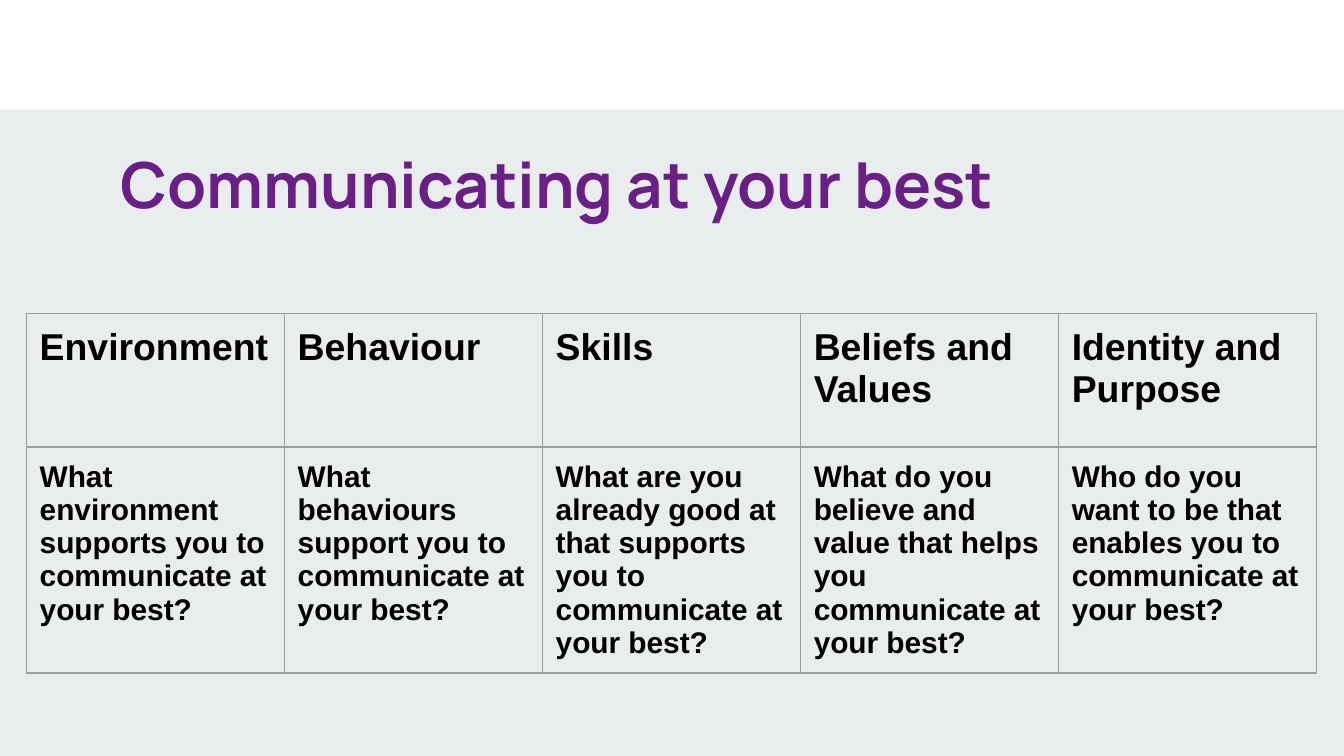
from dataclasses import dataclass

from lxml.etree import SubElement as Sub
from pptx import Presentation as Deck
from pptx.dml.color import RGBColor as Rgb
from pptx.enum.shapes import MSO_SHAPE as Kind
from pptx.enum.text import MSO_ANCHOR as Anchor, PP_ALIGN as Align
from pptx.oxml.ns import qn
from pptx.util import Pt


@dataclass(frozen=True)
class Theme:
    back: str = "E9EDEE"
    band: str = "FFFFFF"
    title: str = "6A1F86"
    ink: str = "000000"
    rule: str = "9E9E9E"
    title_font: str = "Manrope"
    font: str = "Arial"
    title_size: int = 34
    head_size: int = 20
    body_size: int = 16
    pad: float = 7.2
    line: float = 0.75


LOOK = Theme()

LEVELS = [
    ("Environment",
     "What environment supports you to communicate at your best?"),
    ("Behaviour",
     "What behaviours support you to communicate at your best?"),
    ("Skills",
     "What are you already good at that supports you to communicate at your best?"),
    ("Beliefs and Values",
     "What do you believe and value that helps you communicate at your best?"),
    ("Identity and Purpose",
     "Who do you want to be that enables you to communicate at your best?"),
]


def paint(fill, color):
    fill.solid()
    fill.fore_color.rgb = Rgb.from_string(color)


def inset(box):
    box.margin_left = box.margin_right = Pt(LOOK.pad)
    box.margin_top = box.margin_bottom = Pt(LOOK.pad)
    box.vertical_anchor = Anchor.TOP


def write(frame, text, font, size, color):
    para = frame.paragraphs[0]
    para.alignment = Align.LEFT
    run = para.add_run()
    run.text = text
    run.font.name = font
    run.font.size = Pt(size)
    run.font.bold = True
    run.font.color.rgb = Rgb.from_string(color)


def add_band(slide, width, height):
    band = slide.shapes.add_shape(Kind.RECTANGLE, 0, 0, width, height)
    band.shadow.inherit = False
    paint(band.fill, LOOK.band)
    band.line.fill.background()


def add_title(slide, text):
    box = slide.shapes.add_textbox(Pt(57.6), Pt(70.6), Pt(605.5), Pt(90.7))
    frame = box.text_frame
    frame.word_wrap = True
    inset(frame)
    write(frame, text, LOOK.title_font, LOOK.title_size, LOOK.title)


def add_edges(cell):
    props = cell._tc.get_or_add_tcPr()
    for side in ("lnL", "lnR", "lnT", "lnB"):
        edge = Sub(props, qn(f"a:{side}"), w=str(Pt(LOOK.line)))
        fill = Sub(edge, qn("a:solidFill"))
        Sub(fill, qn("a:srgbClr"), val=LOOK.rule)


def fill_cell(cell, text, size):
    inset(cell)
    add_edges(cell)
    cell.fill.background()
    write(cell.text_frame, text, LOOK.font, size, LOOK.ink)


def add_grid(slide, levels):
    highs = (71.5, 121)
    sizes = (LOOK.head_size, LOOK.body_size)
    wide = 691.2
    table = slide.shapes.add_table(len(highs), len(levels), Pt(14.1), Pt(168),
                                   Pt(wide), Pt(sum(highs))).table
    table.first_row = table.horz_banding = False
    for row, high in zip(table.rows, highs):
        row.height = Pt(high)
    for col, texts in enumerate(levels):
        table.columns[col].width = Pt(wide / len(levels))
        for row, (text, size) in enumerate(zip(texts, sizes)):
            fill_cell(table.cell(row, col), text, size)


def main():
    deck = Deck()
    deck.slide_width, deck.slide_height = Pt(720), Pt(405)
    slide = deck.slides.add_slide(deck.slide_layouts[6])
    paint(slide.background.fill, LOOK.back)
    add_band(slide, deck.slide_width, Pt(58.8))
    add_grid(slide, LEVELS)
    add_title(slide, "Communicating at your best")
    deck.save("out.pptx")


if __name__ == "__main__":
    main()
